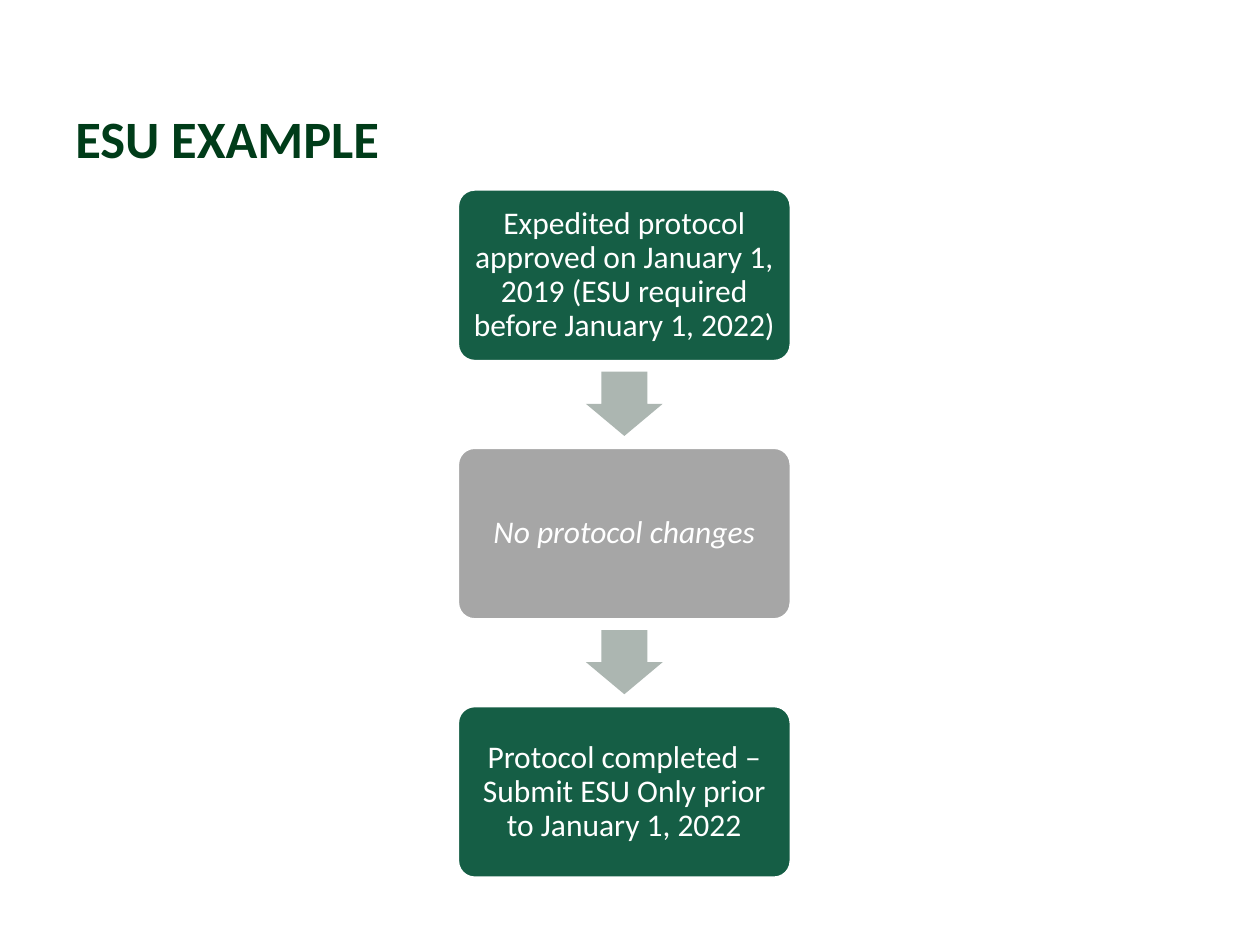
from pptx import Presentation
from pptx.dml.color import RGBColor
from pptx.enum.shapes import MSO_SHAPE
from pptx.enum.text import MSO_ANCHOR, PP_ALIGN
from pptx.util import Inches, Pt


def color(hex_string):
    return RGBColor.from_string(hex_string)


presentation = Presentation()
presentation.slide_width = Inches(10)
presentation.slide_height = Inches(7.5)
slide = presentation.slides.add_slide(presentation.slide_layouts[6])

# Title
title = slide.shapes.add_textbox(Inches(0.5), Inches(0.79), Inches(9), Inches(1.07))
title.text_frame.word_wrap = True
paragraph = title.text_frame.paragraphs[0]
paragraph.text = "ESU EXAMPLE"
paragraph.font.name = "Calibri"
paragraph.font.size = Pt(30)
paragraph.font.bold = True
paragraph.font.color.rgb = color("003C19")

# Vertical process: text, fill, italic
steps = [
    ("Expedited protocol approved on January 1, 2019 "
     "(ESU required before January 1, 2022)", "155E45", False),
    ("No protocol changes", "A6A6A6", True),
    ("Protocol completed – Submit ESU Only prior to January 1, 2022", "155E45", False),
]
first_top, step_pitch = 1.5, 2.05
arrow_offset = 1.4

for index, (text, fill, italic) in enumerate(steps):
    top = first_top + index * step_pitch

    # Step box
    box = slide.shapes.add_shape(MSO_SHAPE.ROUNDED_RECTANGLE, Inches(3.63),
                                 Inches(top), Inches(2.65), Inches(1.37))
    box.adjustments[0] = 0.1
    box.shadow.inherit = False
    box.fill.solid()
    box.fill.fore_color.rgb = color(fill)
    box.line.color.rgb = color("FFFFFF")
    box.line.width = Pt(2)

    frame = box.text_frame
    frame.word_wrap = True
    frame.vertical_anchor = MSO_ANCHOR.MIDDLE
    frame.margin_left = frame.margin_right = Inches(0.08)
    frame.margin_top = frame.margin_bottom = Inches(0.08)
    paragraph = frame.paragraphs[0]
    paragraph.text = text
    paragraph.alignment = PP_ALIGN.CENTER
    paragraph.line_spacing = 0.9
    paragraph.font.name = "Calibri"
    paragraph.font.size = Pt(18)
    paragraph.font.italic = italic
    paragraph.font.color.rgb = color("FFFFFF")

    # Arrow to the next step
    if index < len(steps) - 1:
        arrow = slide.shapes.add_shape(MSO_SHAPE.RIGHT_ARROW, Inches(4.7),
                                       Inches(top + arrow_offset),
                                       Inches(0.51), Inches(0.61))
        arrow.rotation = 90
        arrow.adjustments[0] = 0.6
        arrow.adjustments[1] = 0.5
        arrow.shadow.inherit = False
        arrow.fill.solid()
        arrow.fill.fore_color.rgb = color("ACB6B1")
        arrow.line.fill.background()

presentation.save("out.pptx")
